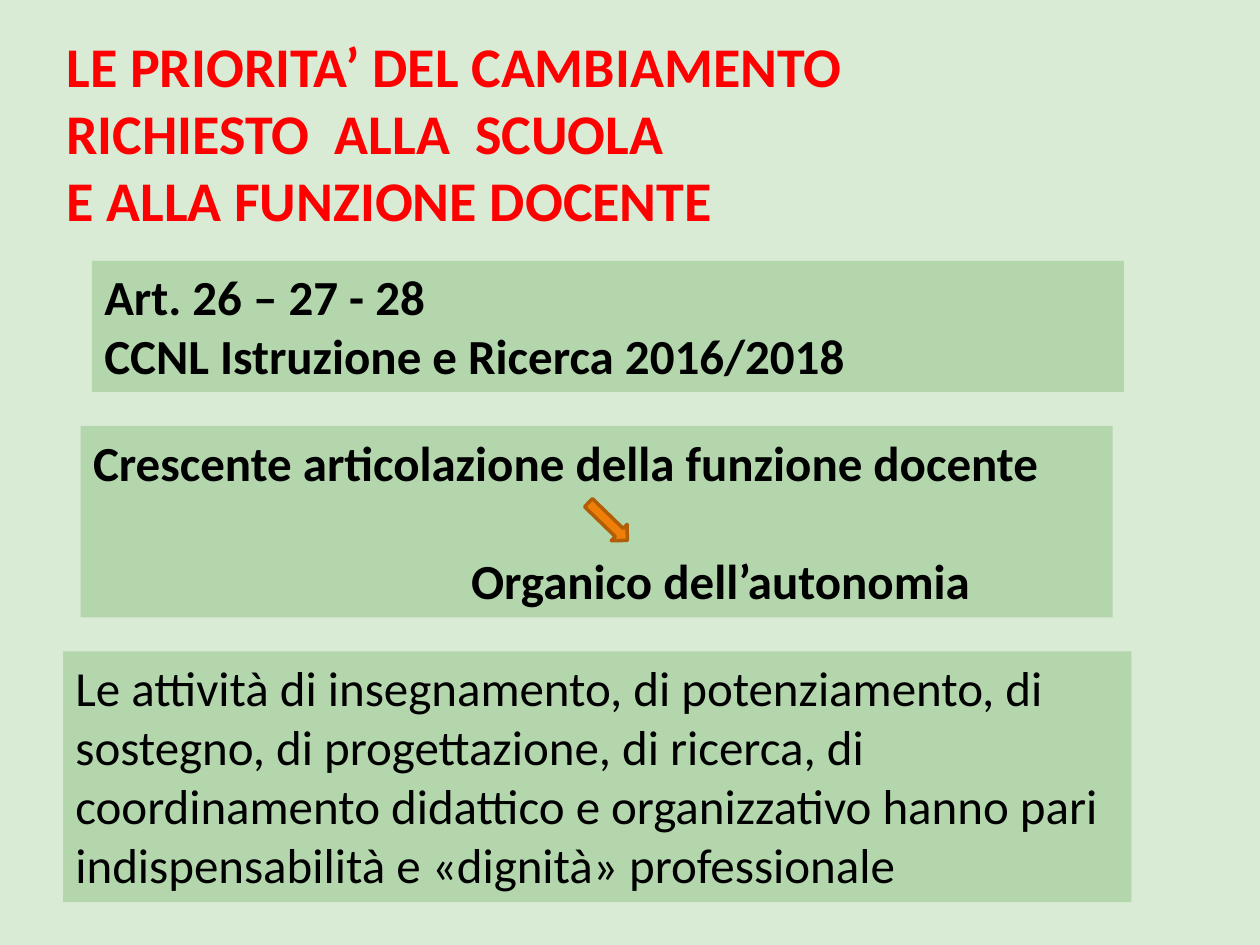
"""Build the slide on the priorities of change in the teaching profession."""
from pptx import Presentation
from pptx.dml.color import RGBColor
from pptx.enum.shapes import MSO_SHAPE
from pptx.enum.text import MSO_ANCHOR, PP_ALIGN
from pptx.util import Inches, Pt

COLORS = {
    "background": "D9EAD5",
    "panel": "B3D6AC",
    "title": "FF0000",
    "body": "000000",
    "arrow": "F07F09",
    "arrow_line": "B25E07",
}
FONT = "Calibri"
WIDTH, HEIGHT = 10, 7.5

TITLE = {
    "lines": ["LE PRIORITA’ DEL CAMBIAMENTO", "RICHIESTO  ALLA  SCUOLA", "E ALLA FUNZIONE DOCENTE"],
    "box": (0.43, 0.2, 8.96, 1.72), "size": 32, "color": "title", "bold": True,
}
ARTICLES = {
    "lines": ["Art. 26 – 27 - 28", "CCNL Istruzione e Ricerca 2016/2018"],
    "box": (0.73, 2.07, 8.19, 1.04), "fill": "panel", "bold": True,
}
STAFFING = {
    "lines": ["Crescente articolazione della funzione docente", "Organico dell’autonomia"],
    "box": (0.64, 3.38, 8.19, 1.52), "fill": "panel", "bold": True,
}
ACTIVITIES = {
    "lines": ["Le attività di insegnamento, di potenziamento, di sostegno, di progettazione, "
              "di ricerca, di coordinamento didattico e organizzativo hanno pari "
              "indispensabilità e «dignità» professionale"],
    "box": (0.5, 5.17, 8.48, 1.99), "fill": "panel",
}
ARROW_BOX, ARROW_ROTATION = (4.61, 4.05, 0.43, 0.18), 44.1
STAFFING_INDENT, STAFFING_GAP = 3, 34


def color(name):
    return RGBColor.from_string(COLORS[name])


def add_block(slide, lines, box, size=28, color_name="body", bold=False, fill=None):
    position = [Inches(value) for value in box]
    if fill:
        shape = slide.shapes.add_shape(MSO_SHAPE.RECTANGLE, *position)
        shape.shadow.inherit = False
        shape.fill.solid()
        shape.fill.fore_color.rgb = color(fill)
        shape.line.fill.background()
    else:
        shape = slide.shapes.add_textbox(*position)
    text_frame = shape.text_frame
    text_frame.word_wrap = True
    text_frame.vertical_anchor = MSO_ANCHOR.TOP
    text_frame.text = "\n".join(lines)
    for paragraph in text_frame.paragraphs:
        paragraph.alignment = PP_ALIGN.LEFT
        for run in paragraph.runs:
            run.font.name = FONT
            run.font.size = Pt(size)
            run.font.bold = bold
            run.font.color.rgb = color(color_name)
    return shape


def add_arrow(slide):
    arrow = slide.shapes.add_shape(MSO_SHAPE.RIGHT_ARROW, *[Inches(value) for value in ARROW_BOX])
    arrow.rotation = ARROW_ROTATION
    arrow.shadow.inherit = False
    arrow.fill.solid()
    arrow.fill.fore_color.rgb = color("arrow")
    arrow.line.color.rgb = color("arrow_line")
    arrow.line.width = Pt(2)


def main():
    presentation = Presentation()
    presentation.slide_width, presentation.slide_height = Inches(WIDTH), Inches(HEIGHT)
    slide = presentation.slides.add_slide(presentation.slide_layouts[6])
    slide.background.fill.solid()
    slide.background.fill.fore_color.rgb = color("background")

    add_block(slide, **ACTIVITIES)
    add_block(slide, TITLE["lines"], TITLE["box"], TITLE["size"], TITLE["color"], TITLE["bold"])
    staffing = add_block(slide, **STAFFING)
    conclusion = staffing.text_frame.paragraphs[-1]
    conclusion.space_before = Pt(STAFFING_GAP)
    conclusion._p.get_or_add_pPr().set("marL", str(Inches(STAFFING_INDENT)))
    add_arrow(slide)
    add_block(slide, **ARTICLES)
    presentation.save("out.pptx")


if __name__ == "__main__":
    main()
